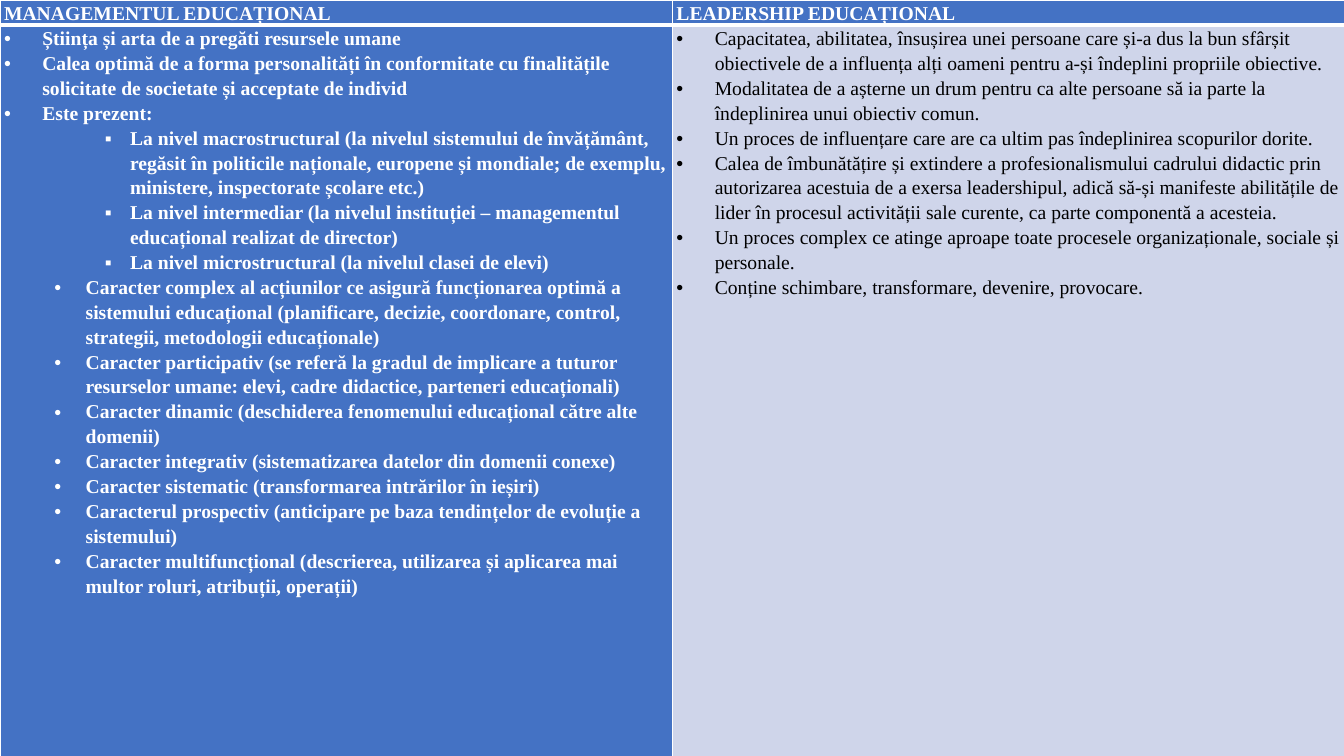
from lxml.etree import SubElement
from pptx import Presentation
from pptx.dml.color import RGBColor
from pptx.oxml.ns import qn
from pptx.util import Inches, Pt

WHITE = RGBColor(0xFF, 0xFF, 0xFF)
BLACK = RGBColor(0, 0, 0)
BLUE = RGBColor(0x44, 0x72, 0xC4)
PALE_BLUE = RGBColor(0xCF, 0xD5, 0xEA)

BULLETS = {0: ("•", 0.38, 0.38), 1: ("•", 0.81, 0.31), 2: ("▪", 1.25, 0.25)}

MANAGEMENT = [
    (0, "Știința și arta de a pregăti resursele umane"),
    (0, "Calea optimă de a forma personalități în conformitate cu finalitățile "
        "solicitate de societate și acceptate de individ"),
    (0, "Este prezent:"),
    (2, "La nivel macrostructural (la nivelul sistemului de învățământ, regăsit în "
        "politicile naționale, europene și mondiale; de exemplu, ministere, "
        "inspectorate școlare etc.)"),
    (2, "La nivel intermediar (la nivelul instituției – managementul educațional "
        "realizat de director)"),
    (2, "La nivel microstructural (la nivelul clasei de elevi)"),
    (1, "Caracter complex al acțiunilor ce asigură funcționarea optimă a sistemului "
        "educațional (planificare, decizie, coordonare, control, strategii, "
        "metodologii educaționale)"),
    (1, "Caracter participativ (se referă la gradul de implicare a tuturor "
        "resurselor umane: elevi, cadre didactice, parteneri educaționali)"),
    (1, "Caracter dinamic (deschiderea fenomenului educațional către alte domenii)"),
    (1, "Caracter integrativ (sistematizarea datelor din domenii conexe)"),
    (1, "Caracter sistematic (transformarea intrărilor în ieșiri)"),
    (1, "Caracterul prospectiv (anticipare pe baza tendințelor de evoluție a "
        "sistemului)"),
    (1, "Caracter multifuncțional (descrierea, utilizarea și aplicarea mai multor "
        "roluri, atribuții, operații)"),
]

LEADERSHIP = [
    (0, "Capacitatea, abilitatea, însușirea unei persoane care și-a dus la bun "
        "sfârșit obiectivele de a influența alți oameni pentru a-și îndeplini "
        "propriile obiective."),
    (0, "Modalitatea de a așterne un drum pentru ca alte persoane să ia parte la "
        "îndeplinirea unui obiectiv comun."),
    (0, "Un proces de influențare care are ca ultim pas îndeplinirea scopurilor "
        "dorite."),
    (0, "Calea de îmbunătățire și extindere a profesionalismului cadrului didactic "
        "prin autorizarea acestuia de a exersa leadershipul, adică să-și manifeste "
        "abilitățile de lider în procesul activității sale curente, ca parte "
        "componentă a acesteia."),
    (0, "Un proces complex ce atinge aproape toate procesele organizaționale, "
        "sociale și personale."),
    (0, "Conține schimbare, transformare, devenire, provocare."),
]


class SlideBuilder:
    """Holds the text style and the current slide, and draws its elements."""

    font_name = "Times New Roman"
    font_size = Pt(14)
    line_spacing = 1.15

    def __init__(self, page):
        self.page = page

    def table(self, left, top, widths, heights):
        frame = self.page.shapes.add_table(
            len(heights), len(widths), Inches(left), Inches(top),
            Inches(sum(widths)), Inches(sum(heights)))
        table = frame.table
        for column, width in zip(table.columns, widths):
            column.width = Inches(width)
        for row, height in zip(table.rows, heights):
            row.height = Inches(height)
        return table

    def borders(self, cell, top, bottom):
        properties = cell._tc.get_or_add_tcPr()
        for side, points in (("L", 1), ("R", 1), ("T", top), ("B", bottom)):
            line = SubElement(properties, qn(f"a:ln{side}"), w=str(Pt(points)))
            fill = SubElement(line, qn("a:solidFill"))
            SubElement(fill, qn("a:srgbClr"), val=str(WHITE))

    def bullet(self, para, level):
        symbol, margin, hanging = BULLETS[level]
        para.level = level
        properties = para._p.get_or_add_pPr()
        properties.set("marL", str(Inches(margin)))
        properties.set("indent", str(-Inches(hanging)))
        SubElement(properties, qn("a:buFont"), typeface="Arial")
        SubElement(properties, qn("a:buChar"), char=symbol)

    def cell(self, cell, items, fill, color=WHITE, bold=True, top=1, bottom=1):
        cell.margin_left = cell.margin_right = Inches(0.04)
        cell.margin_top = cell.margin_bottom = 0
        self.borders(cell, top, bottom)
        cell.fill.solid()
        cell.fill.fore_color.rgb = fill
        frame = cell.text_frame
        for index, (level, text) in enumerate(items):
            para = frame.add_paragraph() if index else frame.paragraphs[0]
            para.text = text
            para.line_spacing = self.line_spacing
            if level is not None:
                self.bullet(para, level)
            para.font.name = self.font_name
            para.font.size = self.font_size
            para.font.bold = bold
            para.font.color.rgb = color


def main():
    deck = Presentation()
    deck.slide_width, deck.slide_height = Inches(13.33), Inches(7.5)
    builder = SlideBuilder(deck.slides.add_slide(deck.slide_layouts[6]))
    table = builder.table(0, 0, widths=[6.67, 6.67], heights=[0.17, 7.33])
    titles = ["MANAGEMENTUL EDUCAȚIONAL", "LEADERSHIP EDUCAȚIONAL"]
    for column, title in enumerate(titles):
        builder.cell(table.cell(0, column), [(None, title)], BLUE, bottom=3)
    builder.cell(table.cell(1, 0), MANAGEMENT, BLUE, top=3)
    builder.cell(table.cell(1, 1), LEADERSHIP, PALE_BLUE, BLACK, bold=False, top=3)
    deck.save("out.pptx")


if __name__ == "__main__":
    main()
